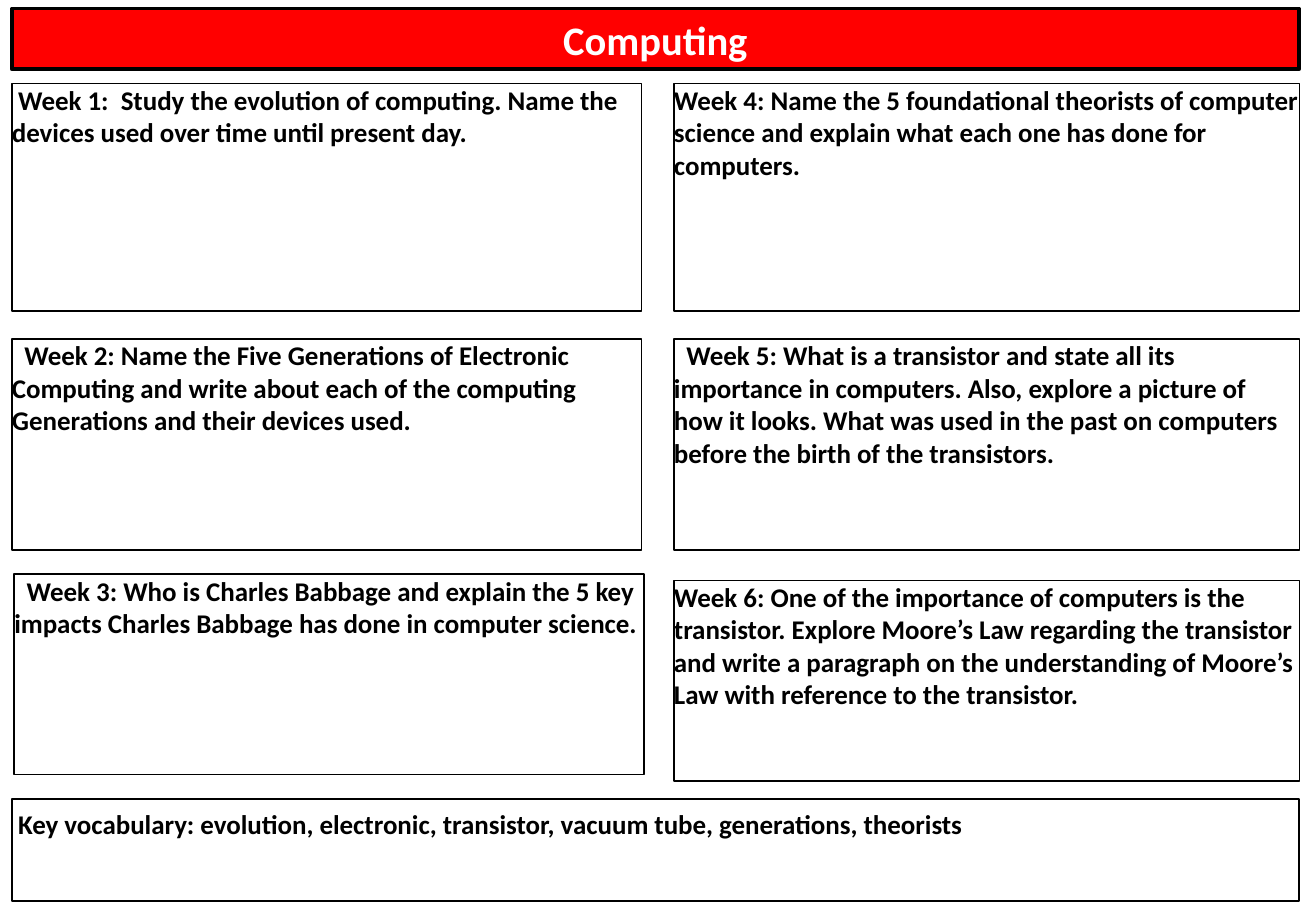
from pptx import Presentation
from pptx.dml.color import RGBColor
from pptx.enum.shapes import MSO_SHAPE
from pptx.enum.text import MSO_ANCHOR, MSO_AUTO_SIZE, PP_ALIGN
from pptx.util import Cm, Pt

RECTANGLE = MSO_SHAPE.RECTANGLE
TOP = MSO_ANCHOR.TOP
FIXED_SIZE = MSO_AUTO_SIZE.NONE
LEFT, CENTER = PP_ALIGN.LEFT, PP_ALIGN.CENTER

BLACK = RGBColor(0x00, 0x00, 0x00)
WHITE = RGBColor(0xFF, 0xFF, 0xFF)
RED = RGBColor(0xFF, 0x00, 0x00)

TITLE_FONT = {"name": "Calibri", "size": Pt(24), "bold": True}
TASK_FONT = {"name": "Calibri", "size": Pt(16), "bold": True}
SPACE = 0.13  # width of one space, used as first-line indent, cm

# Boxes are (left, top, width, height) in cm
MARGIN = 0.25
PAGE_WIDTH = 26.9
TITLE_BOX = (MARGIN, 0.18, PAGE_WIDTH, 1.27)
VOCABULARY_BOX = (MARGIN, 16.71, PAGE_WIDTH, 2.13)
COLUMNS = [(MARGIN, 13.16), (14.09, 13.08)]
ROWS = [(1.75, 4.75), (7.09, 4.42), (12.14, 4.19)]
WEEK_3_SHIFT = (0.05, -0.13)

# Each week: (first-line indent in spaces, text), column by column
WEEKS = [
    [
        (1, "Week 1:  Study the evolution of computing. Name the devices used "
            "over time until present day."),
        (2, "Week 2: Name the Five Generations of Electronic Computing and "
            "write about each of the computing Generations and their devices used."),
        (2, "Week 3: Who is Charles Babbage and explain the 5 key impacts "
            "Charles Babbage has done in computer science."),
    ],
    [
        (0, "Week 4: Name the 5 foundational theorists of computer science and "
            "explain what each one has done for computers."),
        (2, "Week 5: What is a transistor and state all its importance in "
            "computers. Also, explore a picture of how it looks. What was used "
            "in the past on computers before the birth of the transistors."),
        (0, "Week 6: One of the importance of computers is the transistor. "
            "Explore Moore’s Law regarding the transistor and write a paragraph "
            "on the understanding of Moore’s Law with reference to the transistor."),
    ],
]
VOCABULARY = ("Key vocabulary: evolution, electronic, transistor, vacuum tube, "
              "generations, theorists")


def apply_format(target, values):
    for attribute, value in values.items():
        setattr(target, attribute, value)


def write_text(frame, text, alignment, font, color):
    paragraph = frame.paragraphs[0]
    paragraph.alignment = alignment
    run = paragraph.add_run()
    run.text = text
    apply_format(run.font, font)
    run.font.color.rgb = color
    return paragraph


def add_title_bar(slide, box):
    title = slide.shapes.title
    apply_format(title, dict(zip(("left", "top", "width", "height"), map(Cm, box))))
    title.fill.solid()
    title.fill.fore_color.rgb = RED
    title.line.color.rgb = BLACK
    title.line.width = Pt(2.25)
    apply_format(title.text_frame, {"word_wrap": True, "auto_size": FIXED_SIZE,
                                    "vertical_anchor": TOP})
    write_text(title.text_frame, "Computing", CENTER, TITLE_FONT, WHITE)


def add_task_box(slide, box, text, indent, top_inset=0):
    task = slide.shapes.add_shape(RECTANGLE, *map(Cm, box))
    task.shadow.inherit = False
    task.fill.background()
    task.line.color.rgb = BLACK
    task.line.width = Pt(1)
    apply_format(task.text_frame, {
        "word_wrap": True, "vertical_anchor": TOP, "margin_left": 0,
        "margin_right": 0, "margin_top": Cm(top_inset), "margin_bottom": 0,
    })
    paragraph = write_text(task.text_frame, text, LEFT, TASK_FONT, BLACK)
    paragraph._p.get_or_add_pPr().set("indent", str(Cm(indent * SPACE)))


def add_weeks(slide):
    for column, ((left, width), weeks) in enumerate(zip(COLUMNS, WEEKS)):
        for row, ((top, height), (indent, text)) in enumerate(zip(ROWS, weeks)):
            shift_x, shift_y = WEEK_3_SHIFT if (column, row) == (0, 2) else (0, 0)
            box = (left + shift_x, top + shift_y, width, height)
            add_task_box(slide, box, text, indent)


def main():
    presentation = Presentation()
    presentation.slide_width = Cm(27.51)
    presentation.slide_height = Cm(19.05)
    slide = presentation.slides.add_slide(presentation.slide_layouts[5])

    # Title bar
    add_title_bar(slide, TITLE_BOX)
    # Six weekly tasks
    add_weeks(slide)
    # Key vocabulary
    add_task_box(slide, VOCABULARY_BOX, VOCABULARY, 1, top_inset=0.18)

    presentation.save("out.pptx")


if __name__ == "__main__":
    main()
